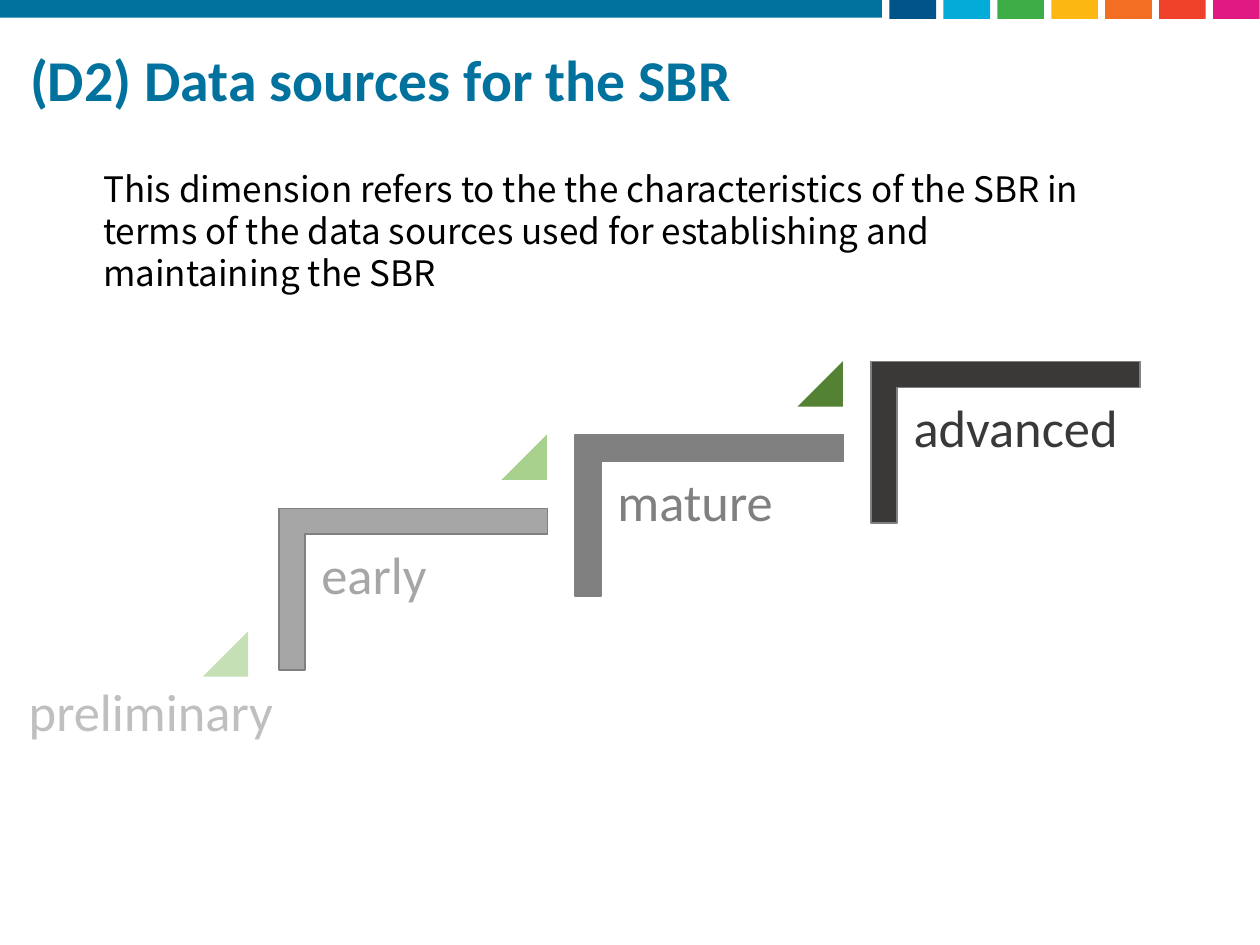
import pptx
import pptx.util
import pptx.dml.color
import pptx.enum.shapes
import pptx.enum.text

RGB = pptx.dml.color.RGBColor
Kind = pptx.enum.shapes.MSO_SHAPE
Anchor = pptx.enum.text.MSO_ANCHOR
Pt = pptx.util.Pt

TEAL = RGB(0x01, 0x71, 0x9D)
NAVY = RGB(0x00, 0x54, 0x89)
SKY = RGB(0x03, 0xAC, 0xD8)
GREEN = RGB(0x3D, 0xAD, 0x48)
GOLD = RGB(0xFD, 0xB7, 0x13)
ORANGE = RGB(0xF3, 0x6D, 0x22)
RED = RGB(0xEF, 0x41, 0x2A)
PINK = RGB(0xE0, 0x19, 0x83)
BLACK = RGB(0x00, 0x00, 0x00)
PALE = RGB(0xBF, 0xBF, 0xBF)
SILVER = RGB(0xA6, 0xA6, 0xA6)
GRAY = RGB(0x80, 0x80, 0x80)
COAL = RGB(0x3B, 0x38, 0x38)
MINT = RGB(0xC5, 0xE0, 0xB4)
LEAF = RGB(0xA9, 0xD1, 0x8E)
MOSS = RGB(0x54, 0x82, 0x35)

COLS, ROWS = 100, 75


def write(frame, text, size=30, color=BLACK, font="Calibri", bold=False, space=None):
    para = frame.paragraphs[0]
    if space:
        para.line_spacing = space
    run = para.add_run()
    run.text = text
    run.font.size = Pt(size)
    run.font.name = font
    run.font.bold = bold
    run.font.color.rgb = color


class Deck:
    def __init__(self):
        self.prs = pptx.Presentation()
        self.prs.slide_width = pptx.util.Inches(10)
        self.prs.slide_height = pptx.util.Inches(7.5)
        self.slide = self.prs.slides.add_slide(self.prs.slide_layouts[6])

    def place(self, col, row, wide, high):
        across = self.prs.slide_width / COLS
        down = self.prs.slide_height / ROWS
        return [round(n) for n in (col * across, row * down, wide * across, high * down)]

    def shape(self, kind, box, fill, line=None, turn=0, adjust=()):
        item = self.slide.shapes.add_shape(kind, *self.place(*box))
        item.shadow.inherit = False
        item.rotation = turn
        for i, value in enumerate(adjust):
            item.adjustments[i] = value
        item.fill.solid()
        item.fill.fore_color.rgb = fill
        if line:
            item.line.color.rgb = line
            item.line.width = Pt(1)
        else:
            item.line.fill.background()

    def text(self, box, words, inset=None, anchor=Anchor.TOP, **style):
        frame = self.slide.shapes.add_textbox(*self.place(*box)).text_frame
        frame.word_wrap = True
        frame.vertical_anchor = anchor
        if inset:
            frame.margin_left = frame.margin_right = pptx.util.Inches(inset)
            frame.margin_top = frame.margin_bottom = pptx.util.Inches(inset)
        write(frame, words, **style)

    def wedge(self, col, row, fill):
        self.shape(Kind.ISOSCELES_TRIANGLE, (col, row, 3.6, 3.6), fill, adjust=[1])

    def step(self, index, name, color):
        col, row = 26.4 + 23.5 * index, 36.1 - 5.83 * index
        self.shape(Kind.CORNER, (col, row, 12.8, 21.3), color,
                   line=GRAY, turn=90, adjust=[0.161, 0.161])
        self.text((col - 2.1, row + 6.3, 19.2, 16.8), name,
                  inset=0.12, color=color, space=0.9)


def main():
    deck = Deck()
    deck.shape(Kind.RECTANGLE, (0, 0, 70, 1.4), TEAL)
    for i, color in enumerate((NAVY, SKY, GREEN, GOLD, ORANGE, RED, PINK)):
        deck.shape(Kind.RECTANGLE, (70.6 + 4.28 * i, 0, 3.7, 1.5), color)

    deck.text((1.4, 3.3, 72.3, 6.6), "(D2) Data sources for the SBR",
              anchor=Anchor.MIDDLE, size=33, color=TEAL, bold=True, space=0.9)
    deck.text((7.2, 12.8, 83.4, 11.1),
              "This dimension refers to the the characteristics of the SBR in terms of "
              "the data sources used for establishing and maintaining the SBR",
              size=20, font="Noto Sans CJK JP", space=Pt(24))

    for i, (name, color) in enumerate((("early", SILVER), ("mature", GRAY), ("advanced", COAL))):
        deck.step(i, name, color)
    for i, color in enumerate((LEAF, MOSS)):
        deck.wedge(39.8 + 23.5 * i, 34.5 - 5.83 * i, color)

    deck.text((1.3, 53.4, 25.4, 6.1), "preliminary", color=PALE)
    deck.wedge(16.1, 50.1, MINT)
    deck.prs.save("out.pptx")


if __name__ == "__main__":
    main()
